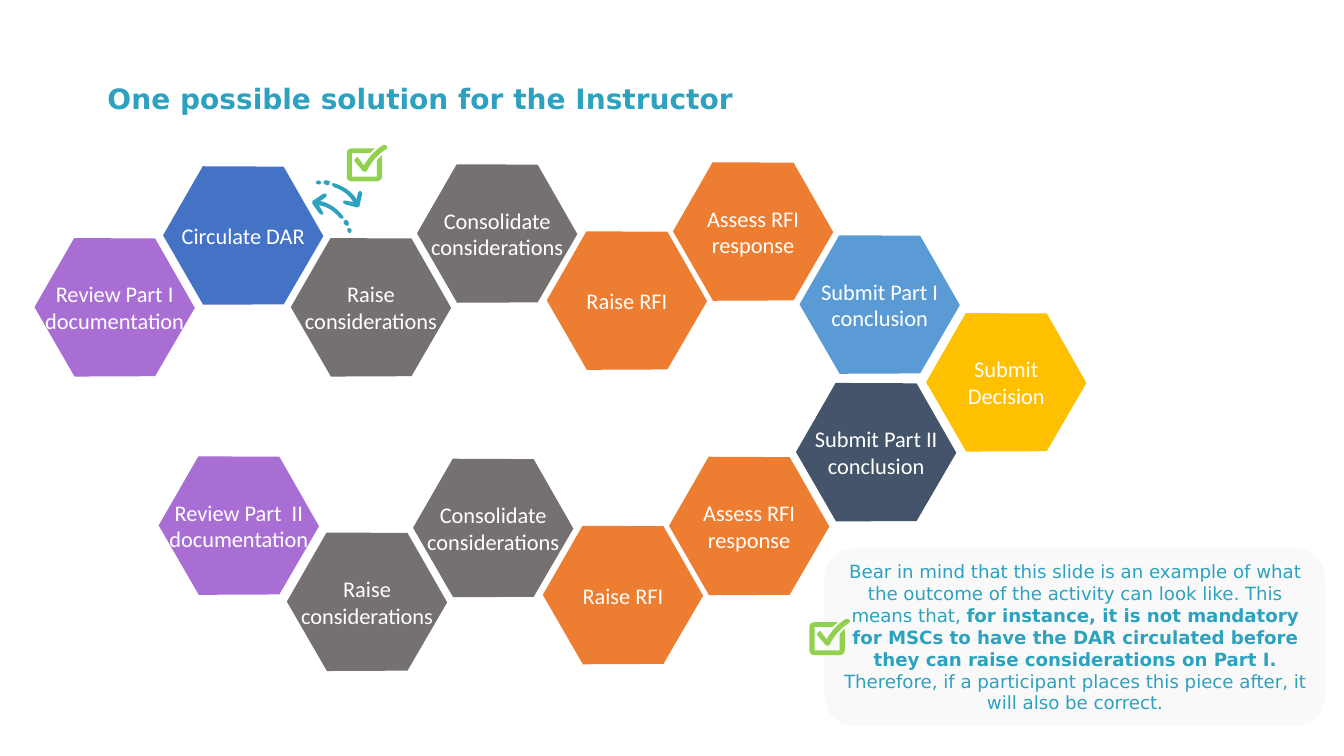
import math

import pptx
import pptx.dml.color
import pptx.enum.shapes
import pptx.enum.text
import pptx.util

Cm = pptx.util.Cm
RGBColor = pptx.dml.color.RGBColor

WHITE = RGBColor(0xFF, 0xFF, 0xFF)
TEAL = RGBColor(0x2D, 0xA2, 0xBF)
PALE_GREY = RGBColor(0xF9, 0xF9, 0xF9)
GREEN = RGBColor(0x92, 0xD0, 0x50)
PURPLE = RGBColor(0xA8, 0x6E, 0xD4)
BLUE = RGBColor(0x44, 0x72, 0xC4)
GREY = RGBColor(0x76, 0x71, 0x71)
ORANGE = RGBColor(0xED, 0x7D, 0x31)
LIGHT_BLUE = RGBColor(0x5B, 0x9B, 0xD5)
YELLOW = RGBColor(0xFF, 0xC0, 0x00)
NAVY = RGBColor(0x44, 0x54, 0x6A)


def add_text(shape, text, size, color, font, bold=False, centred=True):
    frame = shape.text_frame
    frame.word_wrap = True
    paragraph = frame.paragraphs[0]
    if centred:
        frame.vertical_anchor = pptx.enum.text.MSO_ANCHOR.MIDDLE
        paragraph.alignment = pptx.enum.text.PP_ALIGN.CENTER
    run = paragraph.add_run()
    run.text = text
    run.font.size = pptx.util.Pt(size)
    run.font.name = font
    run.font.bold = bold
    run.font.color.rgb = color


def add_outline(shapes, segments, color, move):
    points = [segments[0]]
    for segment in segments[1:]:
        if len(segment) == 2:
            points.append(segment)
            continue
        start = points[-1]
        for step in range(1, 9):
            t = step / 8
            weights = ((1 - t) ** 3, 3 * t * (1 - t) ** 2, 3 * t * t * (1 - t), t ** 3)
            xs = (start[0], *segment[0::2])
            ys = (start[1], *segment[1::2])
            points.append((math.sumprod(weights, xs) if hasattr(math, "sumprod")
                           else sum(w * x for w, x in zip(weights, xs)),
                           sum(w * y for w, y in zip(weights, ys))))
    points = [tuple(1000 * value for value in move(x, y)) for x, y in points]
    builder = shapes.build_freeform(*points[0], scale=Cm(0.001))
    builder.add_line_segments(points[1:], close=True)
    shape = builder.convert_to_shape()
    shape.fill.solid()
    shape.fill.fore_color.rgb = color
    shape.line.fill.background()
    shape.shadow.inherit = False
    return shape


presentation = pptx.Presentation()
presentation.slide_width = Cm(33.87)
presentation.slide_height = Cm(19.05)
slide = presentation.slides.add_slide(presentation.slide_layouts[6])

title = slide.shapes.add_textbox(Cm(2.46), Cm(1.93), Cm(25.65), Cm(1.12))
add_text(title, "One possible solution for the Instructor", 20, TEAL, "DejaVu Sans",
         bold=True, centred=False)

reminder = slide.shapes.add_shape(
    pptx.enum.shapes.MSO_SHAPE.ROUNDED_RECTANGLE, Cm(20.78), Cm(13.82), Cm(12.62), Cm(4.47))
reminder.fill.solid()
reminder.fill.fore_color.rgb = PALE_GREY
reminder.line.fill.background()
reminder.shadow.inherit = False
for text, bold in [
    ("Bear in mind that this slide is an example of what the outcome of the activity "
     "can look like. This means that, ", False),
    ("for instance, it is not mandatory for MSCs to have the DAR circulated before they "
     "can raise considerations on Part I. ", True),
    ("Therefore, if a participant places this piece after, it will also be correct.", False),
]:
    add_text(reminder, text, 13, TEAL, "DejaVu Sans", bold=bold)

HEXAGON = [(1, 0), (3.04, 0.01), (4.04, 1.76), (3.04, 3.48), (1.01, 3.49), (0, 1.74)]
PART_TWO_SHIFT = (-0.1, 7.42)
shared_steps = [
    ("Raise considerations", GREY, 7.33, 6),
    ("Consolidate considerations", GREY, 10.51, 4.14),
    ("Raise RFI", ORANGE, 13.78, 5.83),
    ("Assess RFI response", ORANGE, 16.96, 4.09),
]
steps = [
    ("Review Part I documentation", PURPLE, 0.87, 6),
    ("Circulate DAR", BLUE, 4.11, 4.19),
    *shared_steps,
    ("Submit Part I conclusion", LIGHT_BLUE, 20.15, 5.93),
    ("Review Part  II documentation", PURPLE, 4, 11.5),
    *[(text, color, left + PART_TWO_SHIFT[0], top + PART_TWO_SHIFT[1])
      for text, color, left, top in shared_steps],
    ("Submit Part II conclusion", NAVY, 20.06, 9.65),
    ("Submit Decision", YELLOW, 23.34, 7.89),
]
for text, color, left, top in steps:
    hexagon = add_outline(slide.shapes, HEXAGON, color, lambda x, y: (x + left, y + top))
    hexagon.text_frame.margin_left = hexagon.text_frame.margin_right = Cm(0.23)
    add_text(hexagon, text, 16, WHITE, "Calibri")

ARROW = [
    [(8.61, 5.51), (8.64, 5.51), (8.66, 5.49, 8.66, 5.46, 8.64, 5.44),
     (8.46, 5.21, 8.23, 5.08, 7.98, 5.05), (7.95, 5.05, 7.92, 5.08, 7.91, 5.11),
     (7.9, 5.13, 7.92, 5.16, 7.95, 5.16), (8.2, 5.18, 8.38, 5.28, 8.56, 5.49)],
    [(8.74, 5.69), (8.76, 5.69), (8.79, 5.69, 8.79, 5.64, 8.79, 5.61), (8.76, 5.56),
     (8.74, 5.53, 8.71, 5.53, 8.69, 5.56), (8.66, 5.56, 8.66, 5.59, 8.66, 5.61),
     (8.66, 5.64, 8.69, 5.66, 8.69, 5.66)],
    [(8.81, 5.87), (8.86, 5.87, 8.86, 5.82, 8.86, 5.79),
     (8.84, 5.77, 8.81, 5.74, 8.79, 5.74), (8.76, 5.77, 8.74, 5.79, 8.76, 5.82),
     (8.76, 5.84, 8.79, 5.87, 8.81, 5.87)],
    [(8.1, 5.41), (8.13, 5.41), (8.15, 5.38, 8.15, 5.36, 8.13, 5.33), (8, 5.11),
     (8.2, 4.98), (8.23, 4.95, 8.23, 4.93, 8.23, 4.9), (8.2, 4.88, 8.18, 4.88, 8.15, 4.88),
     (7.9, 5.05), (7.87, 5.05, 7.87, 5.08, 7.87, 5.1), (7.87, 5.13), (8.05, 5.38)],
]
ARROW_CENTRE = (8.28, 5.28)
RETURN_CENTRE = (8.71, 4.9)
cosine = math.cos(math.radians(68.8))
sine = math.sin(math.radians(68.8))
for piece in ARROW:
    add_outline(slide.shapes, piece, TEAL, lambda x, y: (x, y))
    add_outline(slide.shapes, piece, TEAL, lambda x, y: (
        RETURN_CENTRE[0] - (x - ARROW_CENTRE[0]) * cosine - (y - ARROW_CENTRE[1]) * sine,
        RETURN_CENTRE[1] - (x - ARROW_CENTRE[0]) * sine + (y - ARROW_CENTRE[1]) * cosine))

TICK = [
    (0.97, 0), (0.91, 0), (0.66, 0.15, 0.51, 0.38, 0.43, 0.51), (0.3, 0.33),
    (0.3, 0.33, 0.28, 0.3, 0.25, 0.3), (0.23, 0.33), (0.2, 0.36, 0.18, 0.38, 0.2, 0.41),
    (0.41, 0.66), (0.46, 0.67), (0.48, 0.66, 0.51, 0.66, 0.51, 0.64),
    (0.51, 0.64, 0.66, 0.3, 0.99, 0.1), (1.02, 0.08, 1.02, 0.05, 1.02, 0.03),
]
TICK_BOX = [
    (0.76, 0.38), (0.76, 0.79), (0.13, 0.79), (0.13, 0.2), (0.58, 0.2), (0.71, 0.08),
    (0.13, 0.08), (0.05, 0.08, 0, 0.13, 0, 0.2), (0, 0.79), (0, 0.86, 0.05, 0.91, 0.13, 0.91),
    (0.76, 0.91), (0.81, 0.91, 0.89, 0.86, 0.89, 0.79), (0.89, 0.25),
]
for left, top in [(20.4, 15.6), (8.74, 3.66)]:
    checkmark = slide.shapes.add_group_shape()
    for piece in (TICK, TICK_BOX):
        add_outline(checkmark.shapes, piece, GREEN, lambda x, y: (x + left, y + top))

presentation.save("out.pptx")
